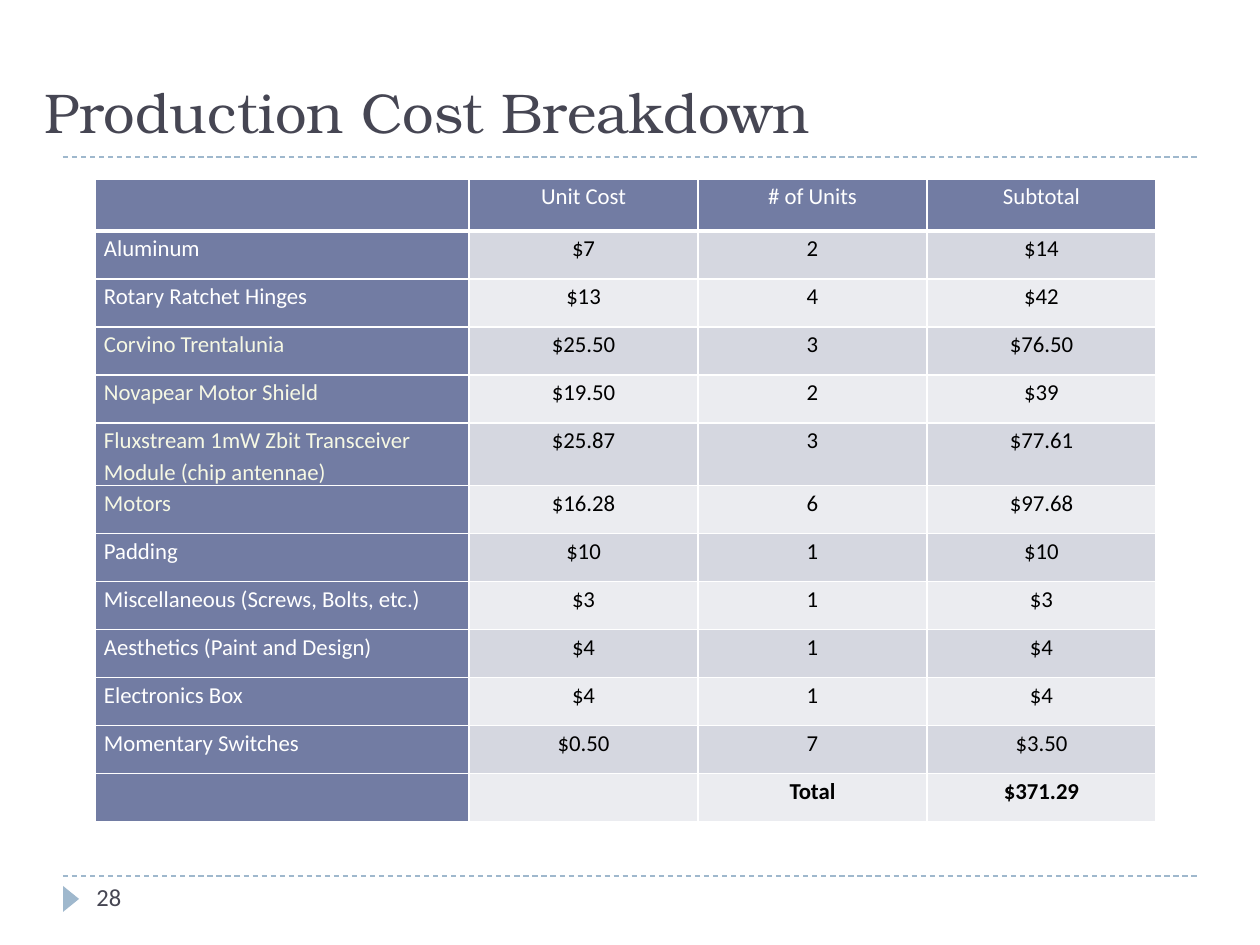
from typing import NamedTuple

from lxml.etree import SubElement
from pptx import Presentation
from pptx.dml.color import RGBColor
from pptx.enum.dml import MSO_LINE
from pptx.enum.shapes import MSO_CONNECTOR, MSO_SHAPE
from pptx.enum.text import MSO_ANCHOR, PP_ALIGN
from pptx.oxml import parse_xml
from pptx.oxml.ns import nsdecls, qn
from pptx.util import Pt

PX = 914400 // 126  # EMU per px
COLORS = {
    "paper": "FFFFFF", "ink": "464653", "accent": "9FB8CD", "head": "727CA3",
    "odd": "D5D7E0", "even": "EBECF0", "cream": "F6F8E4", "black": "000000",
}
BODY_FONT, TITLE_FONT = "Calibri", "TeX Gyre Bonum"


class Box(NamedTuple):
    left: int
    top: int
    width: int
    height: int

    def emu(self) -> list[int]:
        return [side * PX for side in self]


class CostRow(NamedTuple):
    part: str
    unit_cost: str
    units: str
    subtotal: str
    part_color: str = "paper"
    value_color: str = "black"
    bold: bool = False


COSTS = [
    CostRow("", "Unit Cost", "# of Units", "Subtotal", value_color="paper"),
    CostRow("Aluminum", "$7", "2", "$14"),
    CostRow("Rotary Ratchet Hinges", "$13", "4", "$42"),
    CostRow("Corvino Trentalunia", "$25.50", "3", "$76.50", "cream"),
    CostRow("Novapear Motor Shield", "$19.50", "2", "$39", "cream"),
    CostRow("Fluxstream 1mW Zbit Transceiver Module (chip antennae)",
            "$25.87", "3", "$77.61", "cream"),
    CostRow("Motors", "$16.28", "6", "$97.68", "cream"),
    CostRow("Padding", "$10", "1", "$10"),
    CostRow("Miscellaneous (Screws, Bolts, etc.)", "$3", "1", "$3"),
    CostRow("Aesthetics (Paint and Design)", "$4", "1", "$4"),
    CostRow("Electronics Box", "$4", "1", "$4"),
    CostRow("Momentary Switches", "$0.50", "7", "$3.50"),
    CostRow("", "", "Total", "$371.29", bold=True),
]
COLUMN_WIDTHS = [374, 229, 229, 229]
HEADER_HEIGHT, ROW_HEIGHT = 52, 48


def rgb(name: str) -> RGBColor:
    return RGBColor.from_string(COLORS[name])


def style_text(frame, size: int, font: str, color: str, bold: bool = False) -> None:
    for paragraph in frame.paragraphs:
        for run in paragraph.runs:
            run.font.size, run.font.name, run.font.bold = Pt(size), font, bold
            run.font.color.rgb = rgb(color)


def draw_rule(shapes, y: int) -> None:
    rule = shapes.add_connector(MSO_CONNECTOR.STRAIGHT, 63 * PX, y * PX, 1197 * PX, y * PX)
    rule.line.color.rgb = rgb("accent")
    rule.line.width = Pt(0.75)
    rule.line.dash_style = MSO_LINE.DASH
    SubElement(rule._element.spPr, qn("a:effectLst"))


def set_borders(cell, bottom: int) -> None:
    widths = {"lnL": 1, "lnR": 1, "lnT": 1, "lnB": bottom}
    properties = cell._tc.get_or_add_tcPr()
    for position, (edge, points) in enumerate(widths.items()):
        properties.insert(position, parse_xml(
            f'<a:{edge} {nsdecls("a")} w="{Pt(points)}"><a:solidFill>'
            f'<a:srgbClr val="{COLORS["paper"]}"/></a:solidFill></a:{edge}>'))


def draw_cell(cell, text: str, row: int, column: int) -> None:
    cost = COSTS[row]
    cell.margin_left = cell.margin_right = 9 * PX
    cell.margin_top = cell.margin_bottom = 0
    cell.text_frame.text = text
    paragraph = cell.text_frame.paragraphs[0]
    paragraph.line_spacing = 1.15
    paragraph.alignment = PP_ALIGN.CENTER if column else PP_ALIGN.LEFT
    color = cost.value_color if column else cost.part_color
    style_text(cell.text_frame, 13, BODY_FONT, color, cost.bold)
    shade = "head" if row == 0 or column == 0 else "odd" if row % 2 else "even"
    cell.fill.solid()
    cell.fill.fore_color.rgb = rgb(shade)
    set_borders(cell, bottom=1 if row else 3)


def draw_costs(shapes) -> None:
    heights = [HEADER_HEIGHT] + [ROW_HEIGHT] * (len(COSTS) - 1)
    area = Box(95, 179, sum(COLUMN_WIDTHS), sum(heights))
    costs = shapes.add_table(len(COSTS), len(COLUMN_WIDTHS), *area.emu()).table
    costs.first_col = True
    for column, width in zip(costs.columns, COLUMN_WIDTHS):
        column.width = width * PX
    for row, (cost, height) in enumerate(zip(COSTS, heights)):
        costs.rows[row].height = height * PX
        for column, text in enumerate(cost[:4]):
            draw_cell(costs.cell(row, column), text, row, column)


def main() -> None:
    deck = Presentation()
    deck.slide_width, deck.slide_height = 1260 * PX, 945 * PX
    slide = deck.slides.add_slide(deck.slide_layouts[5])
    shapes = slide.shapes

    # Rules and page marker
    for y in (876, 157):
        draw_rule(shapes, y)
    marker = shapes.add_shape(MSO_SHAPE.ISOSCELES_TRIANGLE, *Box(58, 891, 26, 16).emu())
    marker.rotation = 90
    marker.shadow.inherit = False
    marker.fill.solid()
    marker.fill.fore_color.rgb = rgb("accent")
    marker.line.fill.background()

    # Title
    title = shapes.title
    title.left, title.top, title.width, title.height = Box(32, 42, 1134, 109).emu()
    title.text_frame.text = "Production Cost Breakdown"
    title.text_frame.vertical_anchor = MSO_ANCHOR.BOTTOM
    title.text_frame.paragraphs[0].alignment = PP_ALIGN.LEFT
    style_text(title.text_frame, 32, TITLE_FONT, "ink")

    # Page number
    page = shapes.add_textbox(*Box(84, 876, 273, 50).emu()).text_frame
    page.word_wrap = True
    page.text = "28"
    style_text(page, 14, BODY_FONT, "ink")

    # Cost table
    draw_costs(shapes)
    deck.save("out.pptx")


if __name__ == "__main__":
    main()
